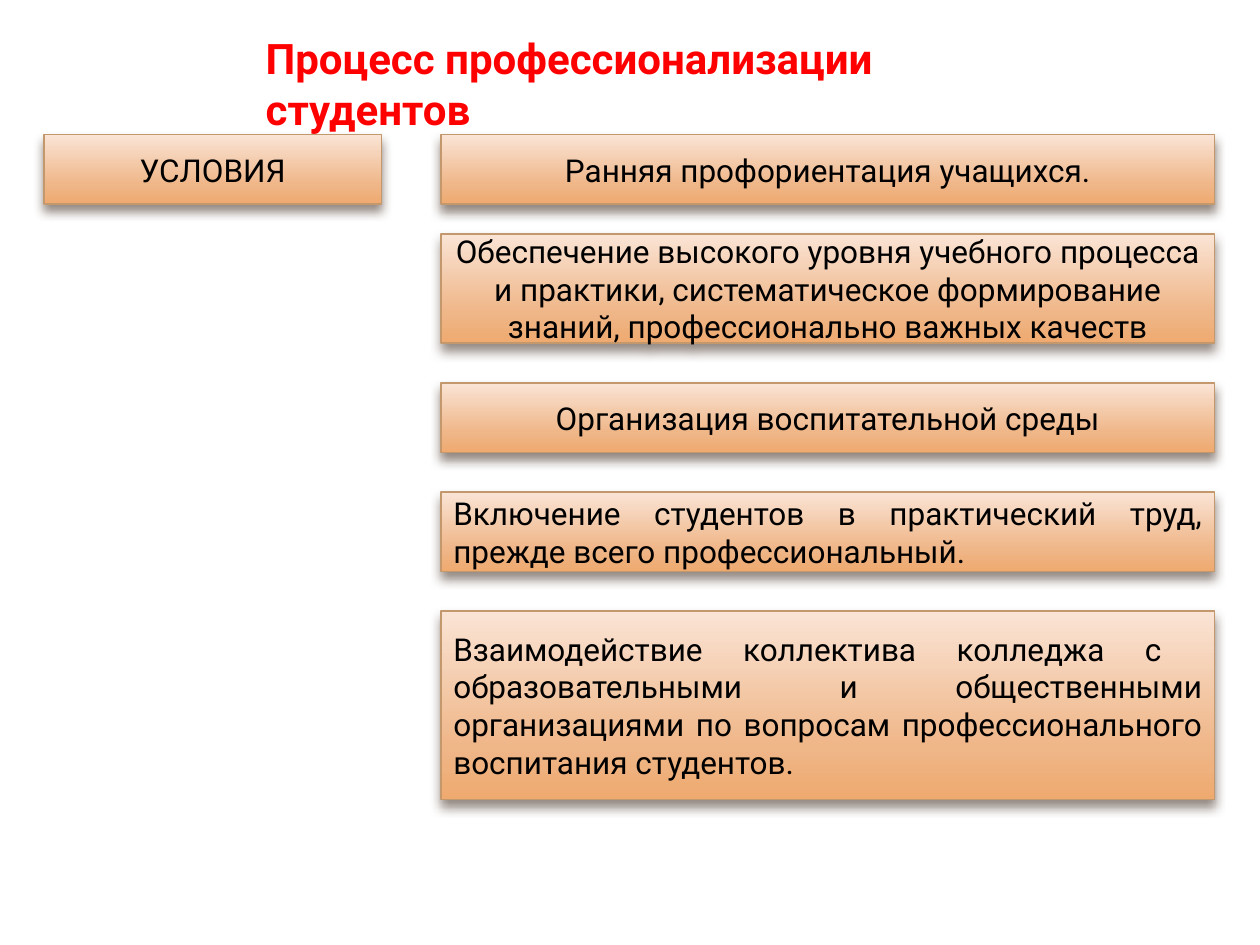
from copy import deepcopy
from dataclasses import dataclass

from lxml import etree
from pptx import Presentation
from pptx.dml.color import RGBColor
from pptx.enum.shapes import MSO_SHAPE
from pptx.enum.text import MSO_ANCHOR, PP_ALIGN
from pptx.oxml.ns import qn
from pptx.util import Inches, Mm, Pt

RECTANGLE = MSO_SHAPE.RECTANGLE
MIDDLE, TOP = MSO_ANCHOR.MIDDLE, MSO_ANCHOR.TOP
LEFT, CENTER, JUSTIFY = PP_ALIGN.LEFT, PP_ALIGN.CENTER, PP_ALIGN.JUSTIFY

RED = RGBColor(0xFF, 0x00, 0x00)
BLACK = RGBColor(0x00, 0x00, 0x00)
OUTLINE = RGBColor(0xC3, 0x98, 0x6D)
SHADOW = RGBColor(0x4E, 0x3B, 0x30)
GRADIENT = (
    (0, RGBColor(0xFA, 0xE4, 0xD5)),
    (0.72, RGBColor(0xEF, 0xB6, 0x88)),
    (1, RGBColor(0xEF, 0xAA, 0x6F)),
)
FONT = "Roboto"

# The boxes sit on a grid of 2 mm cells.
CELL = Mm(2)
GRID_LEFT, GRID_TOP = Inches(0.35), Inches(1.07)
CONDITION_COLUMN, CONDITION_WIDTH = 40, 78


@dataclass(frozen=True)
class Box:
    text: str
    column: int
    row: int
    columns: int
    rows: int
    align: PP_ALIGN = CENTER


def condition(text: str, row: int, rows: int, align: PP_ALIGN = CENTER) -> Box:
    return Box(text, CONDITION_COLUMN, row, CONDITION_WIDTH, rows, align)


BOXES = (
    Box("УСЛОВИЯ", 0, 0, 34, 7),
    condition("Ранняя профориентация учащихся.", 0, 7),
    condition("Обеспечение высокого уровня учебного процесса и практики, "
              "систематическое формирование знаний, профессионально важных качеств", 10, 11),
    condition("Организация воспитательной среды", 25, 7),
    condition("Включение студентов в практический труд, "
              "прежде всего профессиональный.", 36, 8, JUSTIFY),
    condition("Взаимодействие коллектива колледжа с  образовательными и общественными "
              "организациями по вопросам профессионального воспитания студентов.",
              48, 19, JUSTIFY),
)


def write(shape, text: str, *, size: int = 18, color: RGBColor = BLACK, bold: bool = False,
          align: PP_ALIGN = CENTER, anchor: MSO_ANCHOR = MIDDLE) -> None:
    frame = shape.text_frame
    frame.word_wrap = True
    frame.vertical_anchor = anchor
    paragraph = frame.paragraphs[0]
    paragraph.alignment = align
    run = paragraph.add_run()
    run.text = text
    run.font.name = FONT
    run.font.size = Pt(size)
    run.font.bold = bold
    run.font.color.rgb = color


def fill_gradient(shape) -> None:
    """Fill from top to bottom with the three GRADIENT stops."""
    shape.fill.gradient()
    shape.fill.gradient_angle = 270
    stop_list = shape._element.spPr.find(qn("a:gradFill")).find(qn("a:gsLst"))
    stop_list.append(deepcopy(stop_list[0]))
    for stop, (position, color) in zip(shape.fill.gradient_stops, GRADIENT):
        stop.position = position
        stop.color.rgb = color


def cast_shadow(shape) -> None:
    """Put a soft shadow straight below the shape."""
    shape.shadow.inherit = False
    effects = shape._element.spPr.find(qn("a:effectLst"))
    outer = etree.SubElement(effects, qn("a:outerShdw"), blurRad=str(Pt(6)),
                             dist=str(Pt(4)), dir="5400000", rotWithShape="0")
    color = etree.SubElement(outer, qn("a:srgbClr"), val=str(SHADOW))
    etree.SubElement(color, qn("a:alpha"), val="60000")


def draw_box(slide, box: Box) -> None:
    shape = slide.shapes.add_shape(
        RECTANGLE, GRID_LEFT + box.column * CELL, GRID_TOP + box.row * CELL,
        box.columns * CELL, box.rows * CELL)
    fill_gradient(shape)
    shape.line.color.rgb = OUTLINE
    shape.line.width = Pt(0.79)
    cast_shadow(shape)
    write(shape, box.text, align=box.align)


def main() -> None:
    presentation = Presentation()
    presentation.slide_width, presentation.slide_height = Inches(10), Inches(7.5)
    slide = presentation.slides.add_slide(presentation.slide_layouts[6])

    title = slide.shapes.add_textbox(Inches(2.01), Inches(0.21), Inches(6.22), Inches(0.5))
    write(title, "Процесс профессионализации студентов",
          size=24, color=RED, bold=True, align=LEFT, anchor=TOP)
    for box in BOXES:
        draw_box(slide, box)

    presentation.save("out.pptx")


if __name__ == "__main__":
    main()
